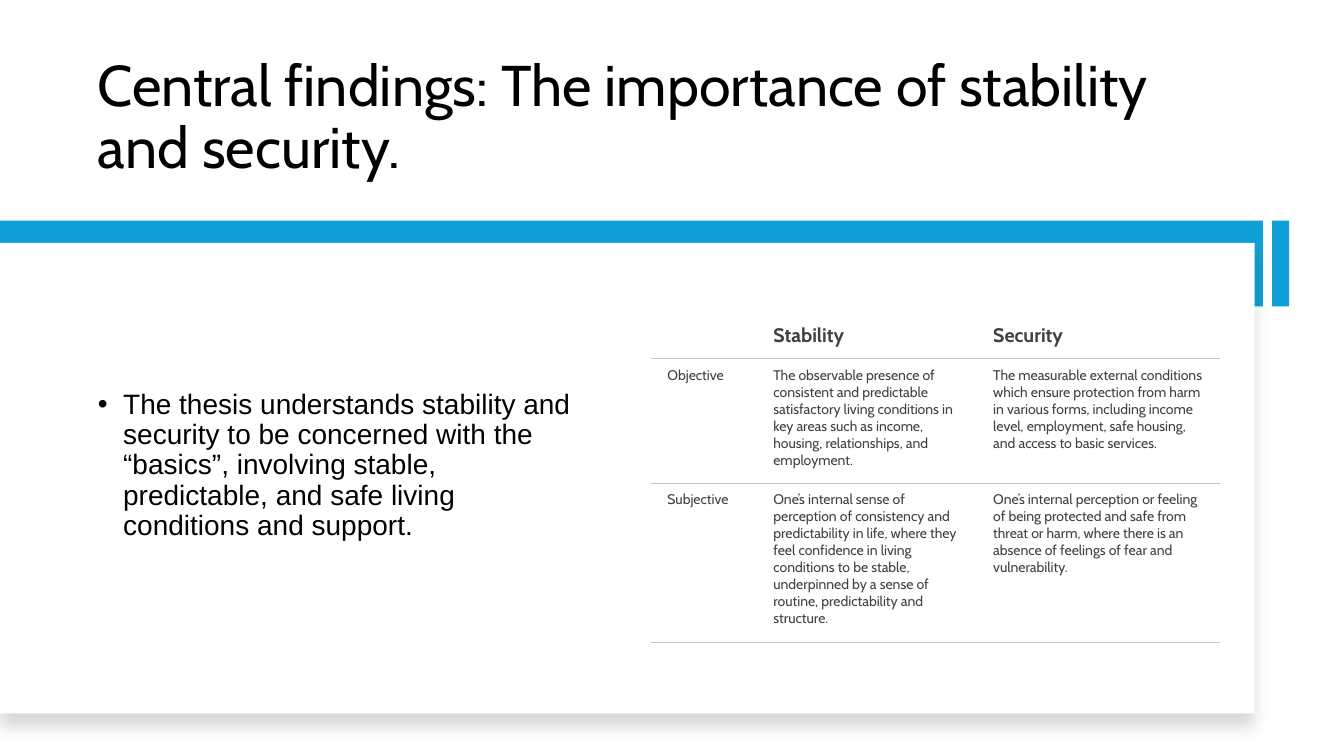
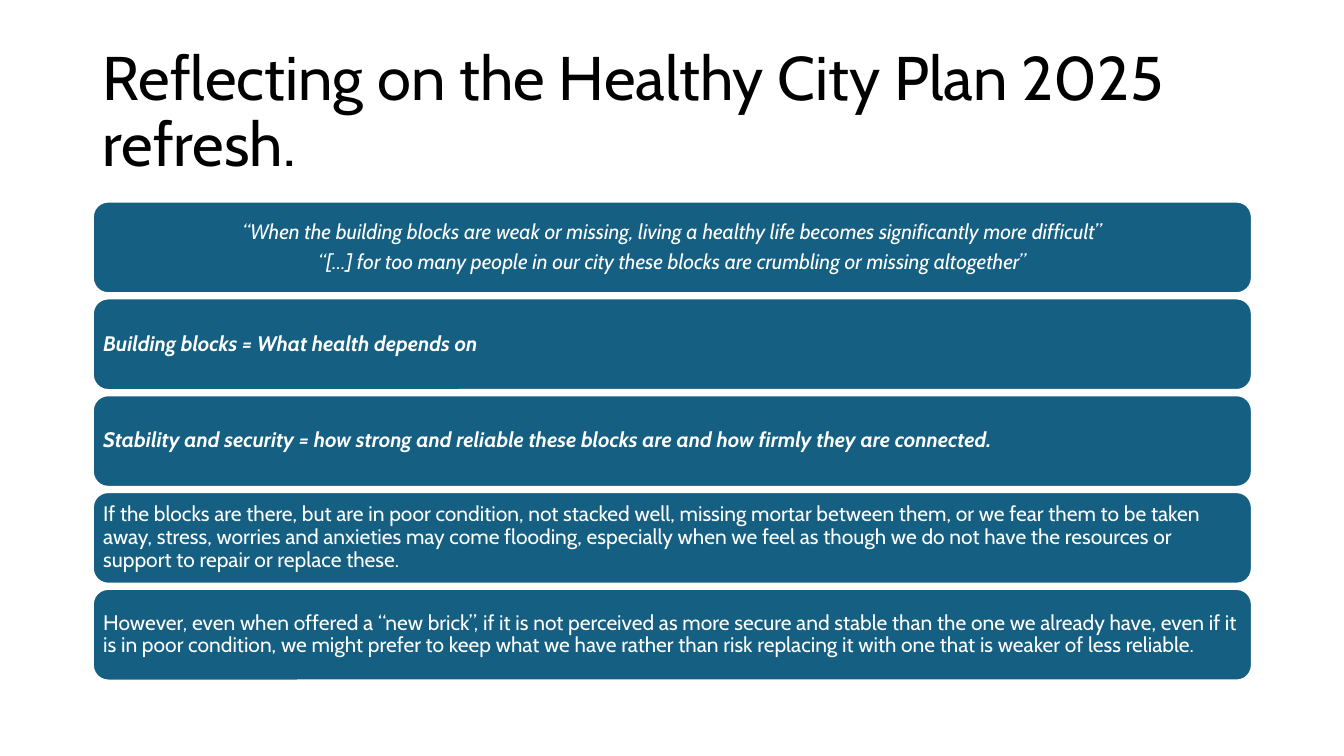
import pptx
import pptx.util
import pptx.dml.color
import pptx.enum.shapes
import pptx.enum.text
import pptx.oxml
import pptx.oxml.ns

Cm, Pt = pptx.util.Cm, pptx.util.Pt
RGB = pptx.dml.color.RGBColor.from_string
SHAPE = pptx.enum.shapes.MSO_SHAPE
ANCHOR = pptx.enum.text.MSO_ANCHOR
ALIGN = pptx.enum.text.PP_ALIGN
NS = pptx.oxml.ns.nsdecls("a")

COLORS = {
    "text": "000000",
    "card": "FFFFFF",
    "accent": "0F9ED5",
    "block": "156082",
    "table_text": "404040",
    "rule": "C7C6C1",
}
FONT = "Cabin"


def add_block(s, kind, box, color):
    """Add a filled shape without outline or shadow."""
    sp = s.shapes.add_shape(kind, *[Cm(v) for v in box])
    sp.shadow.inherit = False
    sp.fill.solid()
    sp.fill.fore_color.rgb = RGB(COLORS[color])
    sp.line.fill.background()
    return sp


def fill_placeholder(sp, text, box, anchor, font, size):
    sp.left, sp.top, sp.width, sp.height = [Cm(v) for v in box]
    tf = sp.text_frame
    tf.text = text
    tf.word_wrap = True
    tf.auto_size = pptx.enum.text.MSO_AUTO_SIZE.NONE
    tf.vertical_anchor = anchor
    p = tf.paragraphs[0]
    p.alignment = ALIGN.LEFT
    p.line_spacing = 0.9
    p.font.name, p.font.size = font, Pt(size)
    p.font.color.rgb = RGB(COLORS["text"])
    return p


prs = pptx.Presentation()
prs.slide_width, prs.slide_height = Cm(33.87), Cm(19.05)

# Slide 1: findings and definitions
s = prs.slides.add_slide(prs.slide_layouts[1])
fill_placeholder(
    s.shapes.title,
    "Central findings: The importance of stability and security.",
    (2.21, 1.07, 27.97, 3.61), ANCHOR.BOTTOM, FONT, 41)

add_block(s, SHAPE.RECTANGLE, (0, 5.56, 31.83, 2.16), "accent")
add_block(s, SHAPE.RECTANGLE, (32.06, 5.56, 0.43, 2.16), "accent")
card = add_block(s, SHAPE.RECTANGLE, (0, 6.12, 31.62, 11.86), "card")
effects = card._element.spPr.find(pptx.oxml.ns.qn("a:effectLst"))
effects.append(pptx.oxml.parse_xml(
    f'<a:outerShdw {NS} blurRad="{Pt(11)}" dist="{Pt(10)}" dir="5400000" '
    'algn="t" rotWithShape="0"><a:srgbClr val="000000">'
    '<a:alpha val="15000"/></a:srgbClr></a:outerShdw>'))

body = s.placeholders[1]
p = fill_placeholder(
    body,
    "The thesis understands stability and security to be concerned with the "
    "“basics”, involving stable, predictable, and safe living conditions and "
    "support.",
    (2.21, 6.68, 12.6, 10.11), ANCHOR.MIDDLE, "Arial", 20)
p.space_before = Pt(10)
pPr = p._p.get_or_add_pPr()
pPr.set("marL", str(Cm(0.64)))
pPr.set("indent", str(-Cm(0.64)))
card._element.addnext(body._element)  # text lies on the card

definitions = [
    ("", "Stability", "Security"),
    ("Objective",
     "The observable presence of consistent and predictable satisfactory "
     "living conditions in key areas such as income, housing, relationships, "
     "and employment.",
     "The measurable external conditions which ensure protection from harm in "
     "various forms, including income level, employment, safe housing, and "
     "access to basic services."),
    ("Subjective",
     "One’s internal sense of perception of consistency and predictability in "
     "life, where they feel confidence in living conditions to be stable, "
     "underpinned by a sense of routine, predictability and structure.",
     "One’s internal perception or feeling of being protected and safe from "
     "threat or harm, where there is an absence of feelings of fear and "
     "vulnerability."),
]
col_widths = [2.67, 5.54, 6.12]
row_heights = [1.09, 3.14, 4.02]
frame = s.shapes.add_table(
    len(row_heights), len(col_widths), Cm(16.41), Cm(7.95),
    Cm(sum(col_widths)), Cm(sum(row_heights)))
table = frame.table
table.first_row = table.horz_banding = False
style_id = table._tbl.tblPr.find(pptx.oxml.ns.qn("a:tableStyleId"))
style_id.text = "{2D5ABB26-0587-4C30-8999-92F81FD0307C}"  # no style, no grid
for column, width in zip(table.columns, col_widths):
    column.width = Cm(width)
for i, (height, texts) in enumerate(zip(row_heights, definitions)):
    table.rows[i].height = Cm(height)
    for j, text in enumerate(texts):
        cell = table.cell(i, j)
        cell.fill.background()
        cell.margin_left, cell.margin_right = Cm(0.41), Cm(0.3)
        cell.margin_top = cell.margin_bottom = Cm(0.2)
        cell.text = text
        p = cell.text_frame.paragraphs[0]
        p.font.name, p.font.size = FONT, Pt(10 if i else 14)
        p.font.bold = i == 0
        p.font.color.rgb = RGB(COLORS["table_text"])
        edges = ["lnT", "lnB"] if i else ["lnB"]
        for k, edge in enumerate(edges):
            cell._tc.get_or_add_tcPr().insert(k, pptx.oxml.parse_xml(
                f'<a:{edge} {NS} w="{Pt(0.75)}"><a:solidFill>'
                f'<a:srgbClr val="{COLORS["rule"]}"/></a:solidFill></a:{edge}>'))

# Slide 2: stacked statements
s = prs.slides.add_slide(prs.slide_layouts[5])
fill_placeholder(
    s.shapes.title, "Reflecting on the Healthy City Plan 2025 refresh.",
    (2.34, 1.02, 29.21, 3.68), ANCHOR.MIDDLE, FONT, 44)

# (paragraphs, alignment, bold, italic)
statements = [
    (["“When the building blocks are weak or missing, living a healthy life "
      "becomes significantly more difficult”",
      "“[…] for too many people in our city these blocks are crumbling or "
      "missing altogether”"], ALIGN.CENTER, False, True),
    (["Building blocks = What health depends on"], ALIGN.LEFT, True, True),
    (["Stability and security = how strong and reliable these blocks are and "
      "how firmly they are connected."], ALIGN.LEFT, True, True),
    (["If the blocks are there, but are in poor condition, not stacked well, "
      "missing mortar between them, or we fear them to be taken away, stress, "
      "worries and anxieties may come flooding, especially when we feel as "
      "though we do not have the resources or support to repair or replace "
      "these."], ALIGN.LEFT, False, False),
    (["However, even when offered a “new brick”, if it is not perceived as "
      "more secure and stable than the one we already have, even if it is in "
      "poor condition, we might prefer to keep what we have rather than risk "
      "replacing it with one that is weaker of less reliable."],
     ALIGN.LEFT, False, False),
]
for i, (texts, alignment, bold, italic) in enumerate(statements):
    sp = add_block(s, SHAPE.ROUNDED_RECTANGLE,
                   (2.34, 5.08 + i * 2.44, 29.21, 2.31), "block")
    sp.line.color.rgb = RGB(COLORS["card"])
    sp.line.width = Pt(1.5)
    tf = sp.text_frame
    tf.word_wrap = True
    tf.vertical_anchor = ANCHOR.MIDDLE
    # The rounded corners already inset the text by about 0.11 cm
    tf.margin_left = tf.margin_right = Cm(0.15)
    tf.margin_top = tf.margin_bottom = Cm(0.15)
    tf.text = "\n".join(texts)
    for p in tf.paragraphs:
        p.alignment = alignment
        p.line_spacing = 0.9
        p.space_after = Pt(5)
        p.font.name, p.font.size = FONT, Pt(15)
        p.font.bold, p.font.italic = bold, italic
        p.font.color.rgb = RGB(COLORS["card"])

prs.save("out.pptx")
